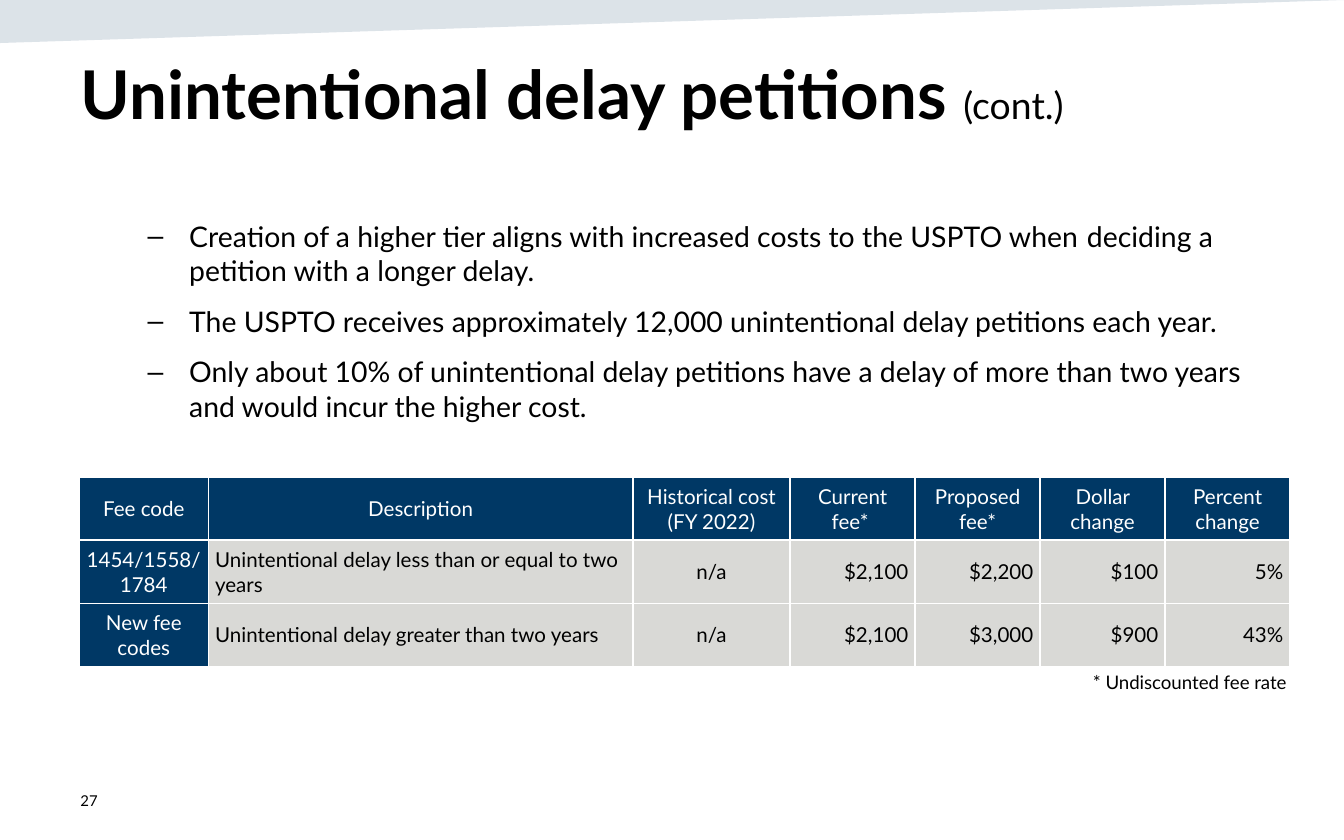
from dataclasses import dataclass

import lxml.etree
import pptx
import pptx.dml.color
import pptx.enum.text
import pptx.oxml.ns
import pptx.util

Inches, Pt = pptx.util.Inches, pptx.util.Pt
ALIGN = pptx.enum.text.PP_ALIGN
ANCHOR = pptx.enum.text.MSO_ANCHOR
qn = pptx.oxml.ns.qn


@dataclass(frozen=True)
class Theme:
    font: str = "Lato"
    bullet_font: str = "Arial"
    ink: str = "000000"
    paper: str = "FFFFFF"
    navy: str = "003865"
    grey: str = "D9D9D6"
    wedge: str = "164469"
    wedge_alpha: int = 15
    title: float = 36
    title_note: float = 20
    body: float = 15.2
    table: float = 11
    footnote: float = 10
    page_number: float = 8


THEME = Theme()
WIDTH, HEIGHT = 10, 6.25
MARGIN = 0.5
HARD_SPACE = chr(160)

TITLE = "Unintentional delay petitions "
TITLE_NOTE = "(cont.)"
BULLETS = [
    "Creation of a higher tier aligns with increased costs to the USPTO "
    f"when{HARD_SPACE}deciding a petition with a longer delay.",
    "The USPTO receives approximately 12,000 unintentional delay petitions each year.",
    "Only about 10% of unintentional delay petitions have a delay of more than two years "
    "and would incur the higher cost.",
]
FEES = [
    ["Fee code", "Description", "Historical cost\n(FY 2022)", f"Current fee*{HARD_SPACE}",
     "Proposed fee*", "Dollar change", "Percent change"],
    ["1454/1558/1784", "Unintentional delay less than or equal to two years",
     "n/a", "$2,100", "$2,200", "$100", "5%"],
    ["New fee codes", "Unintentional delay greater than two years",
     "n/a", "$2,100", "$3,000", "$900", "43%"],
]
COLUMN_WIDTHS = [0.96, 3.16, 1.17] + [0.93] * 4
COLUMN_ALIGN = [ALIGN.CENTER, ALIGN.LEFT, ALIGN.CENTER] + [ALIGN.RIGHT] * 4
TABLE_LEFT, TABLE_TOP, ROW_HEIGHT = 0.59, 3.55, 0.47
FOOTNOTE = "* Undiscounted fee rate"
PAGE_NUMBER = "27"


def rgb(code):
    return pptx.dml.color.RGBColor.from_string(code)


def add_span(para, text, size, color=THEME.ink, bold=False):
    span = para.add_run()
    span.text = text
    span.font.name = THEME.font
    span.font.size = Pt(size)
    span.font.bold = bold
    span.font.color.rgb = rgb(color)


def add_box(slide, left, top, width, height, anchor=ANCHOR.TOP):
    box = slide.shapes.add_textbox(*map(Inches, (left, top, width, height)))
    box.text_frame.word_wrap = True
    box.text_frame.vertical_anchor = anchor
    return box.text_frame


def add_wedge(slide):
    builder = slide.shapes.build_freeform(0, 0)
    builder.add_line_segments([(0, Inches(0.32)), (Inches(WIDTH), 0)], close=True)
    wedge = builder.convert_to_shape()
    wedge.shadow.inherit = False
    wedge.line.fill.background()
    wedge.fill.solid()
    wedge.fill.fore_color.rgb = rgb(THEME.wedge)
    color = wedge.fill._xPr.find(".//" + qn("a:srgbClr"))
    lxml.etree.SubElement(color, qn("a:alpha"), val=str(THEME.wedge_alpha * 1000))


def add_title(slide):
    title = slide.shapes.title
    title.left, title.top, title.width, title.height = map(
        Inches, (MARGIN, 0.34, WIDTH - 2 * MARGIN, 1.04))
    frame = title.text_frame
    frame.auto_size = pptx.enum.text.MSO_AUTO_SIZE.NONE
    frame.vertical_anchor = ANCHOR.TOP
    para = frame.paragraphs[0]
    para.alignment = ALIGN.LEFT
    add_span(para, TITLE, THEME.title, bold=True)
    add_span(para, TITLE_NOTE, THEME.title_note)


def add_bullets(slide):
    frame = add_box(slide, MARGIN, 1.58, WIDTH - 2 * MARGIN, 2.04)
    for index, text in enumerate(BULLETS):
        para = frame.add_paragraph() if index else frame.paragraphs[0]
        para.space_before = Pt(9)
        properties = para._p.get_or_add_pPr()
        properties.set("marL", str(Inches(0.81)))
        properties.set("indent", str(Inches(-0.31)))
        lxml.etree.SubElement(properties, qn("a:buFont"), typeface=THEME.bullet_font)
        lxml.etree.SubElement(properties, qn("a:buChar"), char="–")
        add_span(para, text, THEME.body)


def add_borders(cell):
    properties = cell._tc.get_or_add_tcPr()
    for side in ("a:lnL", "a:lnR", "a:lnT", "a:lnB"):
        line = lxml.etree.SubElement(properties, qn(side), w=str(Pt(1)))
        fill = lxml.etree.SubElement(line, qn("a:solidFill"))
        lxml.etree.SubElement(fill, qn("a:srgbClr"), val=THEME.paper)


def format_cell(cell, text, align, heading):
    add_borders(cell)
    cell.fill.solid()
    cell.fill.fore_color.rgb = rgb(THEME.navy if heading else THEME.grey)
    cell.vertical_anchor = ANCHOR.MIDDLE
    cell.margin_left = cell.margin_right = Inches(0.05)
    cell.margin_top = cell.margin_bottom = Inches(0.05)
    frame = cell.text_frame
    for index, line in enumerate(text.split("\n")):
        para = frame.add_paragraph() if index else frame.paragraphs[0]
        para.alignment = align
        add_span(para, line, THEME.table, THEME.paper if heading else THEME.ink)


def add_fee_table(slide):
    table = slide.shapes.add_table(
        len(FEES), len(COLUMN_WIDTHS), Inches(TABLE_LEFT), Inches(TABLE_TOP),
        Inches(sum(COLUMN_WIDTHS)), Inches(ROW_HEIGHT * len(FEES))).table
    table.first_row = table.horz_banding = False
    for column, width in zip(table.columns, COLUMN_WIDTHS):
        column.width = Inches(width)
    for r, row in enumerate(FEES):
        for c, text in enumerate(row):
            align = COLUMN_ALIGN[c] if r else ALIGN.CENTER
            format_cell(table.cell(r, c), text, align, heading=r == 0 or c == 0)


def add_footer(slide):
    note = add_box(slide, 0.79, 4.94, 8.88, 0.27).paragraphs[0]
    note.alignment = ALIGN.RIGHT
    add_span(note, FOOTNOTE, THEME.footnote)
    number = add_box(slide, MARGIN, 5.79, 2.25, 0.33, ANCHOR.MIDDLE).paragraphs[0]
    add_span(number, PAGE_NUMBER, THEME.page_number)


def main():
    deck = pptx.Presentation()
    deck.slide_width, deck.slide_height = Inches(WIDTH), Inches(HEIGHT)
    slide = deck.slides.add_slide(deck.slide_layouts.get_by_name("Title Only"))
    add_wedge(slide)
    add_title(slide)
    add_bullets(slide)
    add_fee_table(slide)
    add_footer(slide)
    deck.save("out.pptx")


if __name__ == "__main__":
    main()
